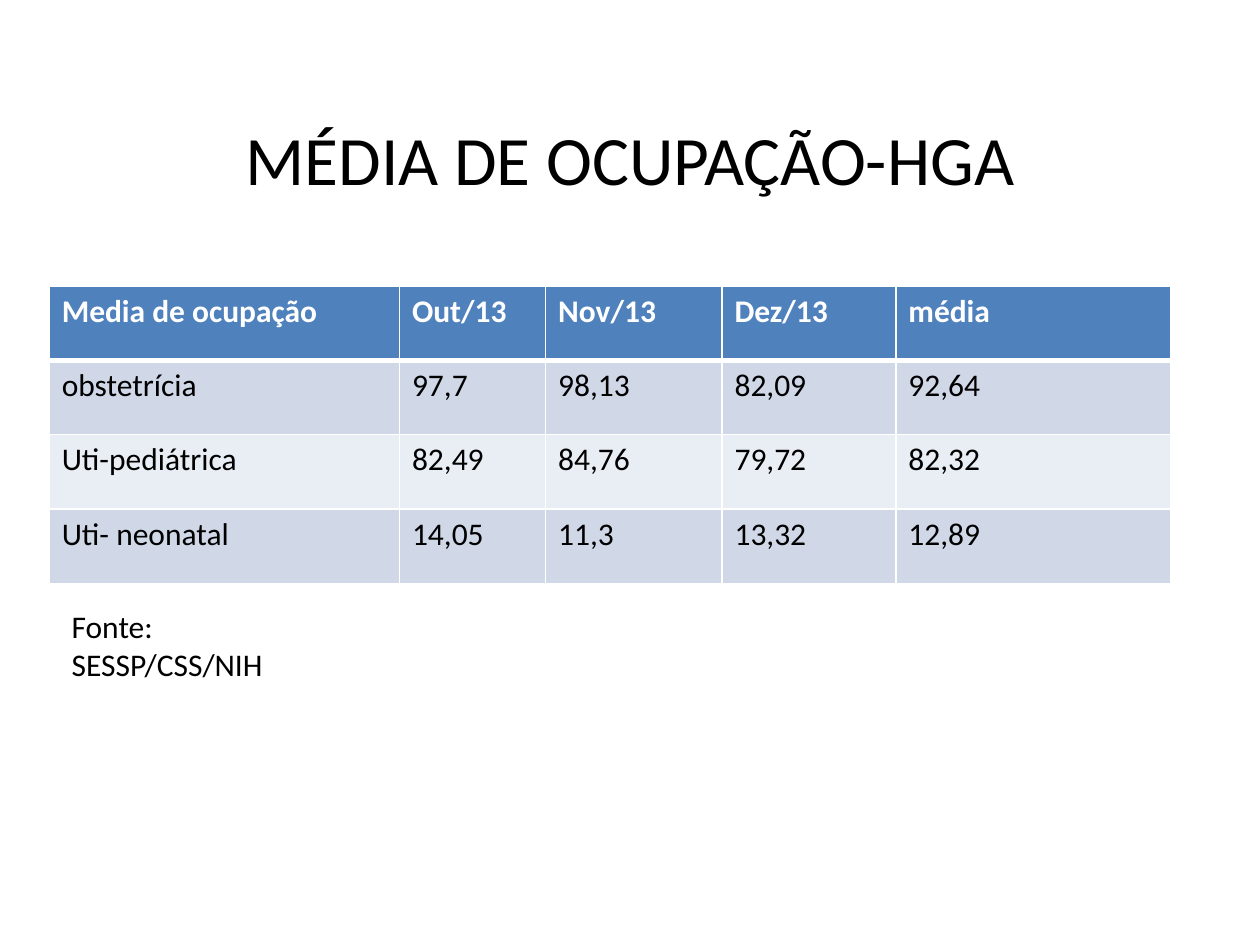
"""Build the hospital occupancy slide with its title, table and source note."""
from dataclasses import dataclass

import lxml.etree
import pptx
import pptx.dml.color
import pptx.enum.text
import pptx.oxml.ns
import pptx.util

Inches = pptx.util.Inches
Pt = pptx.util.Pt
ALIGN = pptx.enum.text.PP_ALIGN
BLACK, WHITE = "000000", "FFFFFF"
HEADER_FILL = "4F81BD"
BAND_FILLS = ("D0D8E8", "E9EDF4")
COL_WIDTHS = (2.78, 1.16, 1.4, 1.38, 2.18)
ROW_HEIGHT = 0.59
ROWS = (
    ("Media de ocupação", "Out/13", "Nov/13", "Dez/13", "média"),
    ("obstetrícia", "97,7", "98,13", "82,09", "92,64"),
    ("Uti-pediátrica", "82,49", "84,76", "79,72", "82,32"),
    ("Uti- neonatal", "14,05", "11,3", "13,32", "12,89"),
)


@dataclass
class Label:
    text: str
    left: float
    top: float
    width: float
    height: float
    size: float
    align: ALIGN = ALIGN.LEFT
    inset_top: float = 0.05


LABELS = (
    Label("MÉDIA DE OCUPAÇÃO-HGA", 0.5, 0.3, 9, 1.25, 39.6, ALIGN.CENTER, 0.62),
    Label("Fonte: SESSP/CSS/NIH", 0.47, 4.77, 1.72, 0.71, 18),
)


def rgb(value: str) -> pptx.dml.color.RGBColor:
    return pptx.dml.color.RGBColor.from_string(value)


def add_run(p, text: str, size: float, color: str = BLACK, bold: bool = False) -> None:
    r = p.add_run()
    r.text = text
    r.font.name = "Calibri"
    r.font.size = Pt(size)
    r.font.bold = bold
    r.font.color.rgb = rgb(color)


def add_label(s, label: Label) -> None:
    sp = s.shapes.add_textbox(
        Inches(label.left), Inches(label.top), Inches(label.width), Inches(label.height)
    )
    tf = sp.text_frame
    tf.word_wrap = True
    tf.margin_top = Inches(label.inset_top)
    p = tf.paragraphs[0]
    p.alignment = label.align
    add_run(p, label.text, label.size)


def add_border(cell, side: str, width: float) -> None:
    qn = pptx.oxml.ns.qn
    tc_pr = cell._tc.get_or_add_tcPr()
    ln = lxml.etree.SubElement(tc_pr, qn(f"a:ln{side}"), w=str(Pt(width)))
    fill = lxml.etree.SubElement(ln, qn("a:solidFill"))
    lxml.etree.SubElement(fill, qn("a:srgbClr"), val=WHITE)


def style_cell(cell, row: int, text: str) -> None:
    header = row == 0
    widths = {"L": 1, "R": 1, "T": 3 if row == 1 else 1, "B": 3 if header else 1}
    for side, width in widths.items():
        add_border(cell, side, width)
    cell.fill.solid()
    cell.fill.fore_color.rgb = rgb(HEADER_FILL if header else BAND_FILLS[(row - 1) % 2])
    p = cell.text_frame.paragraphs[0]
    add_run(p, text, 18, WHITE if header else BLACK, header)


def add_occupancy_table(s) -> None:
    frame = s.shapes.add_table(
        len(ROWS), len(COL_WIDTHS), Inches(0.39), Inches(2.27),
        Inches(sum(COL_WIDTHS)), Inches(ROW_HEIGHT * len(ROWS)),
    )
    table = frame.table
    for column, width in zip(table.columns, COL_WIDTHS):
        column.width = Inches(width)
    for i, values in enumerate(ROWS):
        table.rows[i].height = Inches(ROW_HEIGHT)
        for j, text in enumerate(values):
            style_cell(table.cell(i, j), i, text)


def main() -> None:
    prs = pptx.Presentation()
    prs.slide_width, prs.slide_height = Inches(10), Inches(7.5)
    s = prs.slides.add_slide(prs.slide_layouts[6])
    title, source = LABELS
    add_label(s, title)
    add_occupancy_table(s)
    add_label(s, source)
    prs.save("out.pptx")


if __name__ == "__main__":
    main()
